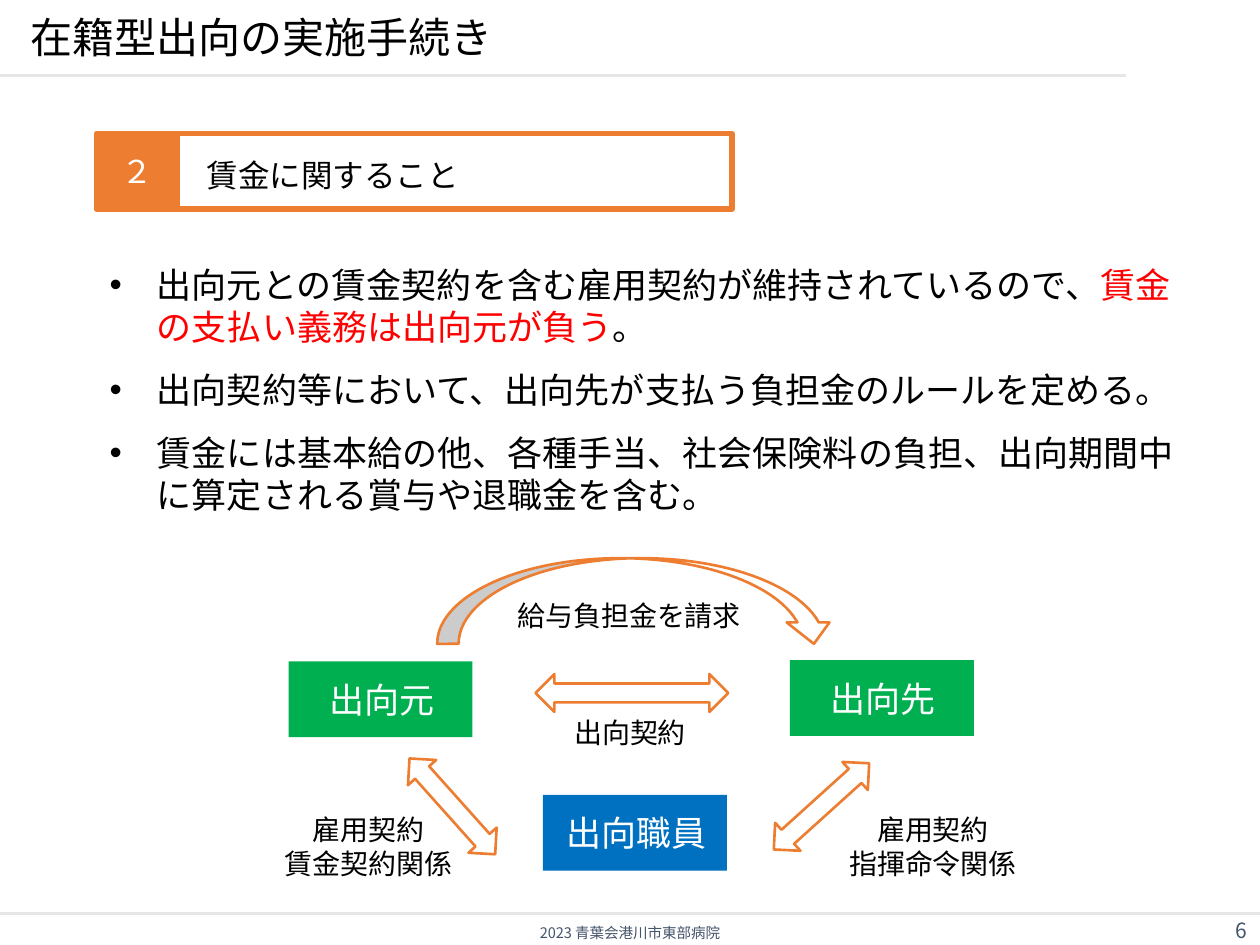
from lxml import etree
from pptx import Presentation
from pptx.dml.color import RGBColor
from pptx.enum.shapes import MSO_CONNECTOR, MSO_SHAPE
from pptx.enum.text import MSO_ANCHOR, MSO_AUTO_SIZE, PP_ALIGN
from pptx.oxml.ns import qn
from pptx.util import Inches, Pt

LEFT, CENTER, RIGHT = PP_ALIGN.LEFT, PP_ALIGN.CENTER, PP_ALIGN.RIGHT
TOP, MIDDLE, BOTTOM = MSO_ANCHOR.TOP, MSO_ANCHOR.MIDDLE, MSO_ANCHOR.BOTTOM
FIXED, GROW = MSO_AUTO_SIZE.NONE, MSO_AUTO_SIZE.SHAPE_TO_FIT_TEXT
RECTANGLE = MSO_SHAPE.RECTANGLE
EXCHANGE_ARROW = MSO_SHAPE.LEFT_RIGHT_ARROW
CLAIM_ARROW = MSO_SHAPE.CURVED_DOWN_ARROW
STRAIGHT = MSO_CONNECTOR.STRAIGHT

BLACK = RGBColor(0x00, 0x00, 0x00)
WHITE = RGBColor(0xFF, 0xFF, 0xFF)
RED = RGBColor(0xFF, 0x00, 0x00)
ORANGE = RGBColor(0xED, 0x7D, 0x31)
GREEN = RGBColor(0x00, 0xB0, 0x50)
BLUE = RGBColor(0x00, 0x70, 0xC0)
SLATE = RGBColor(0x44, 0x54, 0x6A)
RULE_GRAY = RGBColor(0xE7, 0xE6, 0xE6)

GOTHIC = "Noto Sans CJK JP"
LATIN = "Calibri"


def inches(*lengths):
    return [Inches(length) for length in lengths]


def place(part, box):
    part.left, part.top, part.width, part.height = inches(*box)


def write(part, paragraphs, size, font=GOTHIC, color=BLACK, align=LEFT, anchor=MIDDLE,
          insets=(0.1, 0.05, 0.1, 0.05), wrap=True, fit=FIXED, after=0):
    frame = part.text_frame
    frame.word_wrap = wrap
    frame.auto_size = fit
    frame.vertical_anchor = anchor
    (frame.margin_left, frame.margin_top,
     frame.margin_right, frame.margin_bottom) = inches(*insets)
    for index, content in enumerate(paragraphs):
        paragraph = frame.add_paragraph() if index else frame.paragraphs[0]
        paragraph.alignment = align
        paragraph.space_before = Pt(0)
        paragraph.space_after = Pt(after)
        pieces = [(content, color)] if isinstance(content, str) else content
        for text, text_color in pieces:
            run = paragraph.add_run()
            run.text = text
            run.font.name = font
            run.font.size = Pt(size)
            run.font.color.rgb = text_color
            east_asian = etree.SubElement(run.font._element, qn("a:ea"))
            east_asian.set("typeface", font)


def add_text(slide, box, paragraphs, size, **formatting):
    write(slide.shapes.add_textbox(*inches(*box)), paragraphs, size, **formatting)


def add_figure(slide, preset, box, fill, line=None, weight=1.5, rotation=0):
    figure = slide.shapes.add_shape(preset, *inches(*box))
    figure.shadow.inherit = False
    figure.rotation = rotation
    figure.fill.solid()
    figure.fill.fore_color.rgb = fill
    if line is None:
        figure.line.fill.background()
    else:
        figure.line.color.rgb = line
        figure.line.width = Pt(weight)
    return figure


def add_rule(slide, width, y):
    rule = slide.shapes.add_connector(STRAIGHT, *inches(0, y, width, y))
    rule.line.color.rgb = RULE_GRAY
    rule.line.width = Pt(1.5)
    etree.SubElement(rule._element.spPr, qn("a:effectLst"))


def build_header(slide, box):
    title = slide.shapes.title
    place(title, box)
    write(title, ["在籍型出向の実施手続き"], 24, anchor=BOTTOM,
          insets=(0.1, 0.05, 0.1, 0), wrap=False)
    add_rule(slide, 8.94, 0.6)


def build_footer(slide, box):
    left, top, width, height = box
    add_rule(slide, width, 7.25)
    add_text(slide, box, ["2023 青葉会港川市東部病院"], 8.3, color=SLATE, align=CENTER)
    add_text(slide, (left + width - 2.08, top, 2.08, 0.25), ["6"], 12,
             color=SLATE, align=RIGHT)


def build_section_heading(slide, box):
    left, top, _, height = box
    heading = add_figure(slide, RECTANGLE, box, WHITE, ORANGE, 3)
    write(heading, ["賃金に関すること"], 18, insets=(0.87, 0.05, 0.1, 0))
    number = add_figure(slide, RECTANGLE, (left, top, 0.64, height), ORANGE, ORANGE, 3)
    write(number, ["２"], 18, color=WHITE, align=CENTER, insets=(0.04,) * 4)


def build_wage_rules(slide, box):
    rules = slide.placeholders[1]
    place(rules, box)
    write(rules, [
        [("出向元との賃金契約を含む雇用契約が維持されているので、", BLACK),
         ("賃金の支払い義務は出向元が負う", RED), ("。", BLACK)],
        "出向契約等において、出向先が支払う負担金のルールを定める。",
        "賃金には基本給の他、各種手当、社会保険料の負担、出向期間中に算定される賞与や退職金を含む。",
    ], 20, font=LATIN, anchor=TOP, insets=(0.1, 0, 0.1, 0), after=12)


def build_relations(slide, box):
    left, top, _, _ = box

    def within(x, y, width, height):
        return left + x, top + y, width, height

    parties = [("出向先", 4.12, 0.81, GREEN), ("出向元", 0.14, 0.82, GREEN),
               ("出向職員", 2.16, 1.88, BLUE)]
    for name, x, y, fill in parties:
        party = add_figure(slide, RECTANGLE, within(x, y, 1.46, 0.6), fill)
        write(party, [name], 20, color=WHITE, align=CENTER, insets=(0.1, 0, 0.08, 0))

    arrows = [(EXCHANGE_ARROW, (2.1, 0.92, 1.53, 0.3), 0),
              (EXCHANGE_ARROW, (3.86, 1.82, 1.02, 0.3), 317.9),
              (EXCHANGE_ARROW, (0.93, 1.82, 1.02, 0.3), 48.2),
              (CLAIM_ARROW, (1.32, 0, 3.16, 0.68), 0)]
    for preset, arrow_box, rotation in arrows:
        add_figure(slide, preset, within(*arrow_box), WHITE, ORANGE, rotation=rotation)

    labels = [(["雇用契約", "指揮命令関係"], (4.48, 2.02, 1.55, 0.54)),
              (["出向契約"], (2.31, 1.25, 1.1, 0.27)),
              (["給与負担金を請求"], (1.86, 0.32, 2, 0.27)),
              (["雇用契約", "賃金契約関係"], (0, 2.02, 1.55, 0.54))]
    for lines, label_box in labels:
        add_text(slide, within(*label_box), lines, 16, font=LATIN, anchor=TOP,
                 align=CENTER if len(lines) > 1 else LEFT,
                 insets=(0.1, 0, 0.1, 0), wrap=False, fit=GROW)


def main():
    presentation = Presentation()
    presentation.slide_width, presentation.slide_height = inches(10, 7.5)
    slide = presentation.slides.add_slide(presentation.slide_layouts[1])
    build_header(slide, (0.14, 0.11, 8.04, 0.38))
    build_footer(slide, (0, 7.26, 10, 0.29))
    build_section_heading(slide, (0.77, 1.06, 5.04, 0.6))
    build_wage_rules(slide, (0.77, 2.09, 8.72, 2.02))
    build_relations(slide, (2.15, 4.43, 6.03, 2.56))
    presentation.save("out.pptx")


if __name__ == "__main__":
    main()
